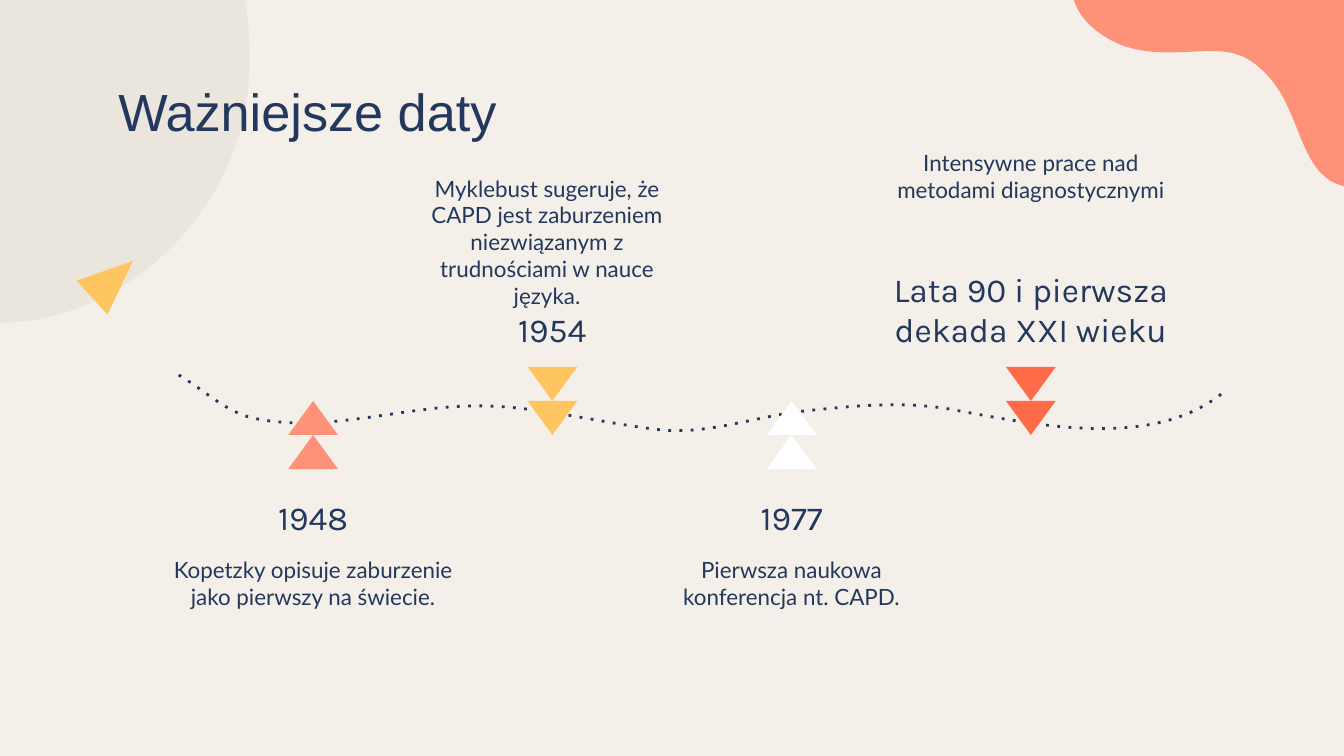
from dataclasses import dataclass

from lxml.etree import SubElement
from pptx import Presentation
from pptx.dml.color import RGBColor as RGB
from pptx.enum.dml import MSO_LINE
from pptx.enum.shapes import MSO_SHAPE
from pptx.enum.text import MSO_ANCHOR as ANCHOR, MSO_AUTO_SIZE as AUTO, PP_ALIGN as ALIGN
from pptx.oxml.ns import qn
from pptx.util import Inches, Pt


@dataclass(frozen=True)
class Theme:
    bg: str = "F4F0E9"
    shade: str = "EBE6DD"
    ink: str = "23385C"
    coral: str = "FD9279"
    red: str = "FF6B48"
    yellow: str = "FFC561"
    white: str = "FFFFFF"
    title: tuple = ("Arial", 28)
    date: tuple = ("Karla", 18)
    caption: tuple = ("Lato", 12)


@dataclass(frozen=True)
class Outline:
    start: tuple
    segments: tuple
    fill: str | None = None


@dataclass(frozen=True)
class Event:
    date: str
    caption: str
    color: str
    above: bool
    caption_top: float = 4.04
    caption_height: float = 0.86
    shift: float = 0
    date_width: float = 2.03


THEME = Theme()
FIRST_X, STEP = 2.33, 1.78
MARK_W, MARK_H = 0.37, 0.76 / 3
CAPTION_W = 2.29

OUTLINES = (
    Outline((1.86, 0.42), (
        (1.86, 0.31, 1.85, 0.19, 1.84, 0.09), (1.83, 0.04, 1.82, -0.01, 1.81, -0.06),
        (-0.14, -0.06), (-0.14, 2.4),
        (0.34, 2.44, 0.93, 2.24, 1.37, 1.74), (1.75, 1.3, 1.86, 0.83, 1.86, 0.42),
    ), THEME.shade),
    Outline((10.02, 1.39), (
        (9.65, 1.32, 9.7, 0.81, 9.4, 0.53), (9.27, 0.4, 9.15, 0.38, 9.02, 0.38),
        (8.92, 0.38, 8.81, 0.39, 8.69, 0.39), (8.58, 0.39, 8.46, 0.38, 8.33, 0.33),
        (8.15, 0.25, 8.03, 0.13, 7.99, 0), (10.02, 0),
    ), THEME.coral),
    Outline((1.33, 2.79), (
        (1.52, 2.9, 1.67, 3.06, 1.88, 3.11), (2.43, 3.23, 2.99, 3.02, 3.55, 3.02),
        (4.01, 3.02, 4.47, 3.15, 4.93, 3.2), (5.28, 3.23, 5.62, 3.1, 5.97, 3.06),
        (6.35, 3.02, 6.73, 2.98, 7.1, 3.05), (7.75, 3.17, 8.57, 3.34, 9.09, 2.93),
    )),
    Outline((0.99, 1.94), ((0.57, 2.09), (0.8, 2.34)), THEME.yellow),
)

EVENTS = (
    Event("1948", "Kopetzky opisuje zaburzenie jako pierwszy na świecie.", THEME.coral, False),
    Event("1954", "Myklebust sugeruje, że CAPD jest zaburzeniem niezwiązanym z "
          "trudnościami w nauce języka.", THEME.yellow, True, 1.2, 0.72, -0.04),
    Event("1977", "Pierwsza naukowa konferencja nt. CAPD.", THEME.white, False),
    Event("Lata 90 i pierwsza dekada XXI wieku", "Intensywne prace nad metodami diagnostycznymi",
          THEME.red, True, 1.01, 0.72, 0, 2.61),
)


def apply(obj, values: dict) -> None:
    for name, value in values.items():
        setattr(obj, name, value)


def paint(s, color: str) -> None:
    s.shadow.inherit = False
    s.fill.solid()
    s.fill.fore_color.rgb = RGB.from_string(color)
    s.line.fill.background()


def write(s, text: str, font: tuple, align, anchor=ANCHOR.TOP, after: float = 0) -> None:
    tf = s.text_frame
    inset = Inches(0.1)
    apply(tf, {"word_wrap": True, "auto_size": AUTO.NONE, "vertical_anchor": anchor,
               "margin_left": inset, "margin_right": inset,
               "margin_top": inset, "margin_bottom": inset})
    p = tf.paragraphs[0]
    apply(p, {"alignment": align, "space_after": Pt(after)})
    r = p.add_run()
    r.text = text
    apply(r.font, {"name": font[0], "size": Pt(font[1])})
    r.font.color.rgb = RGB.from_string(THEME.ink)


def bend(s, segments: tuple) -> None:
    for line, seg in zip(list(s._element.iter(qn("a:lnTo"))), segments):
        if len(seg) == 2:
            continue
        line.clear()
        curve = line.makeelement(qn("a:cubicBezTo"))
        for x, y in zip(seg[::2], seg[1::2]):
            SubElement(curve, qn("a:pt"), x=str(Inches(x) - s.left), y=str(Inches(y) - s.top))
        line.getparent().replace(line, curve)


def draw_outline(shapes, outline: Outline) -> None:
    builder = shapes.build_freeform(*map(Inches, outline.start))
    ends = [(Inches(seg[-2]), Inches(seg[-1])) for seg in outline.segments]
    builder.add_line_segments(ends, close=outline.fill is not None)
    s = builder.convert_to_shape()
    bend(s, outline.segments)
    if outline.fill:
        paint(s, outline.fill)
        return
    s.shadow.inherit = False
    s.fill.background()
    s.line.color.rgb = RGB.from_string(THEME.ink)
    apply(s.line, {"width": Pt(1.5), "dash_style": MSO_LINE.ROUND_DOT})
    s._element.find(".//" + qn("a:prstDash")).set("val", "dot")


def add_text(shapes, center: float, top: float, width: float, height: float, text: str,
             font: tuple, anchor=ANCHOR.TOP, after: float = 0) -> None:
    s = shapes.add_textbox(Inches(center - width / 2), Inches(top), Inches(width), Inches(height))
    write(s, text, font, ALIGN.CENTER, anchor, after)


def draw_event(shapes, event: Event, x: float) -> None:
    date_top, anchor = (2.21, ANCHOR.BOTTOM) if event.above else (3.6, ANCHOR.TOP)
    add_text(shapes, x, date_top, event.date_width, 0.49, event.date, THEME.date, anchor)
    add_text(shapes, x + event.shift, event.caption_top, CAPTION_W, event.caption_height,
             event.caption, THEME.caption, after=16)
    first = 2.73 if event.above else 2.73 + MARK_H
    for i in range(2):
        s = shapes.add_shape(MSO_SHAPE.ISOSCELES_TRIANGLE, Inches(x - MARK_W / 2),
                             Inches(first + i * MARK_H), Inches(MARK_W), Inches(MARK_H))
        s.rotation = 180 if event.above else 0
        paint(s, event.color)


def main() -> None:
    prs = Presentation()
    apply(prs, {"slide_width": Inches(10), "slide_height": Inches(10) * 9 // 16})
    slide = prs.slides.add_slide(prs.slide_layouts[5])
    slide.background.fill.solid()
    slide.background.fill.fore_color.rgb = RGB.from_string(THEME.bg)
    for outline in OUTLINES:
        draw_outline(slide.shapes, outline)
    title = slide.shapes.title
    apply(title, {"left": Inches(0.78), "top": Inches(0.49),
                  "width": Inches(7.42), "height": Inches(0.63)})
    write(title, "Ważniejsze daty", THEME.title, ALIGN.LEFT)
    slide.shapes._spTree.append(title._element)
    for i, event in enumerate(EVENTS):
        draw_event(slide.shapes, event, FIRST_X + i * STEP)
    prs.save("out.pptx")


if __name__ == "__main__":
    main()
